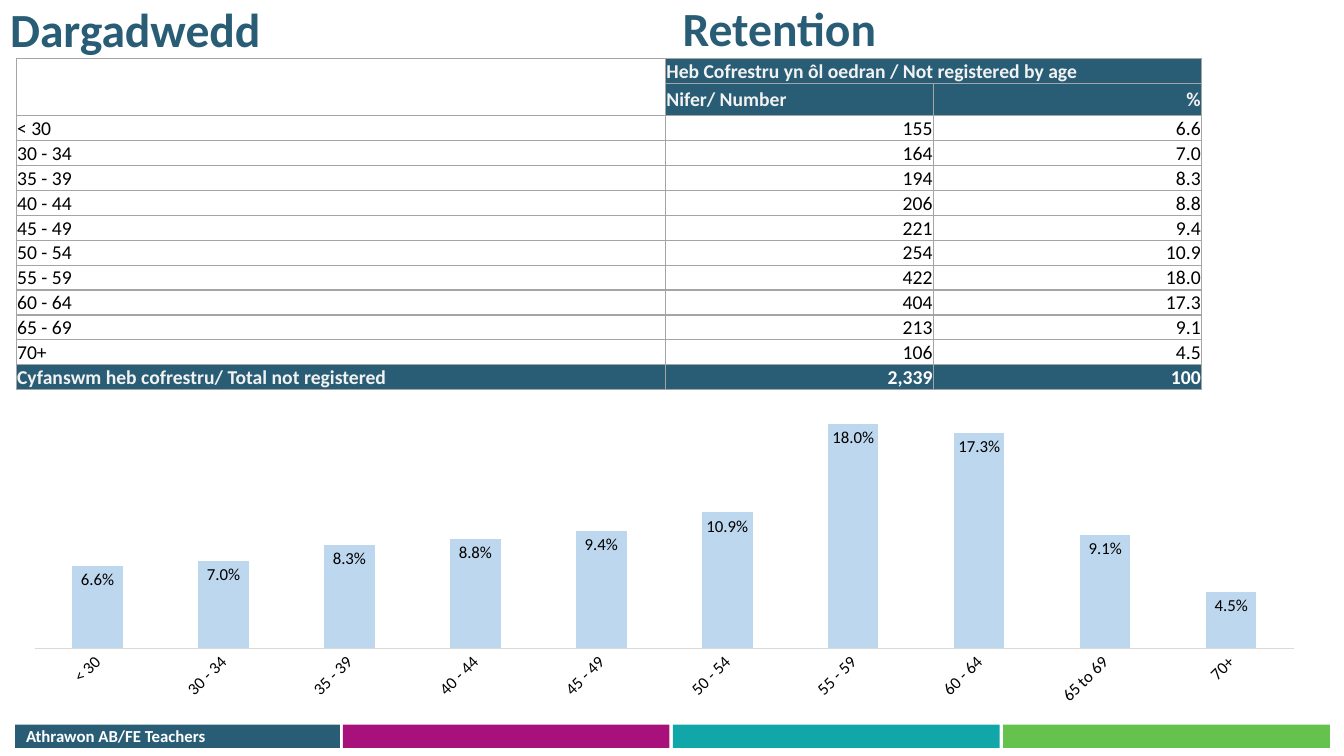
"""Build the bilingual teacher retention slide with its age table and chart."""
from dataclasses import dataclass

from lxml import etree
from pptx import Presentation
from pptx import util as u
from pptx.chart.data import CategoryChartData
from pptx.dml.color import RGBColor
from pptx.enum import chart as charts, shapes, text
from pptx.oxml import parse_xml
from pptx.oxml.ns import nsdecls, qn


@dataclass(frozen=True)
class Theme:
    font: str = "Calibri"
    navy: str = "295D75"
    magenta: str = "A8117C"
    teal: str = "11A6A8"
    green: str = "65C24C"
    column: str = "BDD7EE"
    border: str = "A5A5A5"
    axis: str = "D9D9D9"
    pale: str = "F2F2F2"
    white: str = "FFFFFF"
    black: str = "000000"
    title_size: int = 34
    table_size: int = 14
    label_size: int = 12


theme = Theme()


def style_font(font, size, color, bold=False):
    font.name = theme.font
    font.size = u.Pt(size)
    font.bold = bold
    font.color.rgb = RGBColor.from_string(color)


def write_heading(shape, box, wording, size, color):
    shape.left, shape.top, shape.width, shape.height = (u.Inches(value) for value in box)
    frame = shape.text_frame
    frame.text = wording
    frame.word_wrap = True
    frame.auto_size = text.MSO_AUTO_SIZE.NONE
    frame.vertical_anchor = text.MSO_ANCHOR.TOP
    paragraph = frame.paragraphs[0]
    paragraph.alignment = text.PP_ALIGN.LEFT
    paragraph.line_spacing = 0.9
    paragraph.space_before = u.Pt(0)
    style_font(paragraph.runs[0].font, size, color, True)


presentation = Presentation()
presentation.slide_width = u.Inches(13.33)
presentation.slide_height = u.Inches(7.5)
slide = presentation.slides.add_slide(
    presentation.slide_layouts.get_by_name("Content with Caption"))
content = slide.placeholders[1].element
content.getparent().remove(content)

write_heading(slide.shapes.title, (0, 0.01, 5.22, 0.51), "Dargadwedd",
              theme.title_size, theme.navy)
write_heading(slide.placeholders[2], (6.67, 0, 5.52, 0.51), "Retention",
              theme.title_size, theme.navy)

footer_bars = [(0.15, 3.22, theme.navy)]
for index, color in enumerate((theme.magenta, theme.teal, theme.green)):
    footer_bars.append((3.4 + 3.275 * index, 3.24, color))
for left, width, color in footer_bars:
    bar = slide.shapes.add_shape(shapes.MSO_SHAPE.RECTANGLE, u.Inches(left),
                                 u.Inches(7.19), u.Inches(width), u.Inches(0.23))
    bar.shadow.inherit = False
    bar.fill.solid()
    bar.fill.fore_color.rgb = RGBColor.from_string(color)
    bar.line.fill.background()

age_rows = [
    ("< 30", "155", "6.6"),
    ("30 - 34", "164", "7.0"),
    ("35 - 39", "194", "8.3"),
    ("40 - 44", "206", "8.8"),
    ("45 - 49", "221", "9.4"),
    ("50 - 54", "254", "10.9"),
    ("55 - 59", "422", "18.0"),
    ("60 - 64", "404", "17.3"),
    ("65 - 69", "213", "9.1"),
    ("70+", "106", "4.5"),
]
table_rows = [
    ("", "Heb Cofrestru yn ôl oedran / Not registered by age", ""),
    ("", "Nifer/ Number", "%"),
    *age_rows,
    ("Cyfanswm heb cofrestru/ Total not registered", "2,339", "100"),
]
table = slide.shapes.add_table(len(table_rows), 3, u.Inches(0.16), u.Inches(0.58),
                               u.Inches(11.76), u.Inches(3.25)).table
table.first_row = table.horz_banding = False
for column, width in zip(table.columns, (6.44, 2.66, 2.66)):
    column.width = u.Inches(width)
for row, height in zip(table.rows, [0.25, 0.32] + [0.24] * 11):
    row.height = u.Inches(height)
table.cell(0, 0).merge(table.cell(1, 0))
table.cell(0, 1).merge(table.cell(0, 2))

last_row = len(table_rows) - 1
for row_index, row in enumerate(table_rows):
    for column_index, wording in enumerate(row):
        cell = table.cell(row_index, column_index)
        header = row_index < 2
        total = row_index == last_row
        cell.margin_left = cell.margin_right = cell.margin_top = u.Inches(0.01)
        cell.margin_bottom = 0
        properties = cell._tc.get_or_add_tcPr()
        for side in ("lnL", "lnR", "lnT", "lnB"):
            properties.append(parse_xml(
                f'<a:{side} {nsdecls("a")} w="12700"><a:solidFill>'
                f'<a:srgbClr val="{theme.border}"/></a:solidFill></a:{side}>'))
        if total or header and column_index:
            cell.fill.solid()
            cell.fill.fore_color.rgb = RGBColor.from_string(theme.navy)
        else:
            cell.fill.background()
        if not wording:
            continue
        cell.text_frame.text = wording
        cell.vertical_anchor = (text.MSO_ANCHOR.MIDDLE if header or total
                                else text.MSO_ANCHOR.BOTTOM)
        paragraph = cell.text_frame.paragraphs[0]
        if column_index == 2 or column_index == 1 and not header:
            paragraph.alignment = text.PP_ALIGN.RIGHT
        color = theme.black
        if header or total:
            color = theme.white if total and column_index else theme.pale
        style_font(paragraph.runs[0].font, theme.table_size, color, header or total)

footer_label = slide.shapes.add_textbox(0, 0, 0, 0)
write_heading(footer_label, (0.16, 7.17, 2.36, 0.33), "Athrawon AB/FE Teachers",
              theme.label_size, theme.white)

chart_data = CategoryChartData(number_format="0.0%")
chart_data.categories = [age.replace("65 - 69", "65 to 69") for age, _, _ in age_rows]
chart_data.add_series("Series 1", [round(float(share) / 100, 3) for _, _, share in age_rows])
chart = slide.shapes.add_chart(charts.XL_CHART_TYPE.COLUMN_STACKED, 0, u.Inches(3.88),
                               u.Inches(13.18), u.Inches(3.29), chart_data).chart
chart.has_legend = chart.has_title = False
style_font(chart.font, theme.label_size, theme.black)

plot = chart.plots[0]
plot.gap_width = 150
plot.overlap = 100
plot.vary_by_categories = False
columns = plot.series[0]
columns.format.fill.solid()
columns.format.fill.fore_color.rgb = RGBColor.from_string(theme.column)
plot.has_data_labels = True
labels = plot.data_labels
labels.show_value = True
labels.number_format = "0.0%"
labels.number_format_is_linked = False
labels.position = charts.XL_LABEL_POSITION.INSIDE_END
style_font(labels.font, theme.label_size, theme.black)

age_axis = chart.category_axis
age_axis.major_tick_mark = charts.XL_TICK_MARK.NONE
age_axis.format.line.color.rgb = RGBColor.from_string(theme.axis)
age_axis.format.line.width = u.Pt(0.75)
style_font(age_axis.tick_labels.font, theme.label_size, theme.black)
age_axis._element.find(qn("c:txPr")).find(qn("a:bodyPr")).set("rot", "-2700000")
share_axis = chart.value_axis
share_axis.minimum_scale = 0
share_axis.maximum_scale = 0.2
share_axis.has_major_gridlines = False
share_axis.visible = False

plot_area = chart._chartSpace.chart.plotArea
for old_layout in plot_area.findall(qn("c:layout")):
    plot_area.remove(old_layout)
layout = etree.Element(qn("c:layout"))
manual = etree.SubElement(layout, qn("c:manualLayout"))
for name, value in (("layoutTarget", "inner"), ("xMode", "edge"), ("yMode", "edge"),
                    ("x", "0.026"), ("y", "0.025"), ("w", "0.948"), ("h", "0.75")):
    etree.SubElement(manual, qn(f"c:{name}")).set("val", value)
plot_area.insert(0, layout)

presentation.save("out.pptx")
